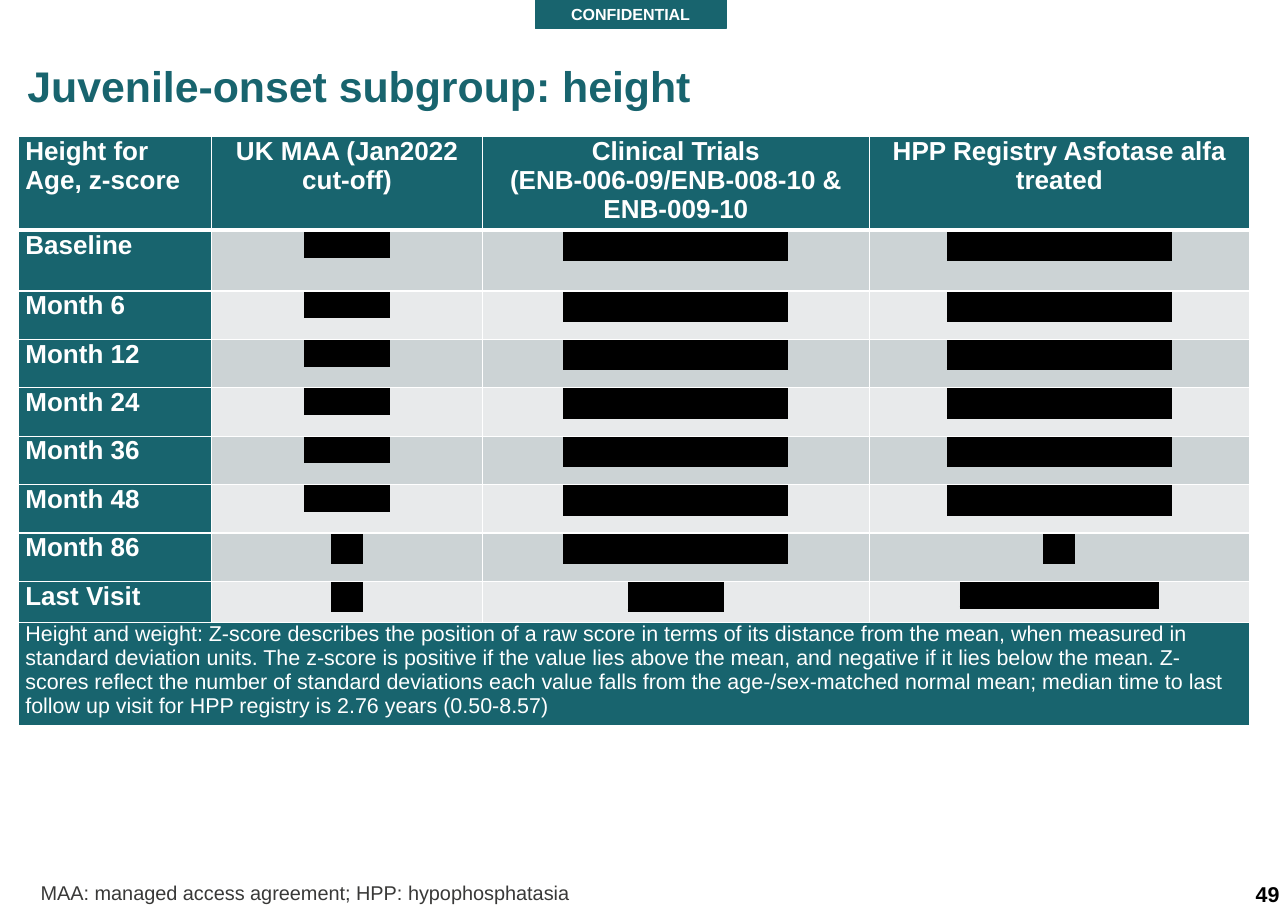
from lxml.etree import SubElement
from pptx import Presentation
from pptx.dml.color import RGBColor
from pptx.enum.shapes import MSO_SHAPE
from pptx.enum.text import MSO_ANCHOR, PP_ALIGN
from pptx.oxml import parse_xml
from pptx.oxml.ns import nsdecls, qn
from pptx.util import Inches, Pt

TEAL = "18646E"
WHITE = "FFFFFF"
BLACK = "000000"
BANDS = ("CCD3D5", "E8EAEB")

COLUMN_WIDTHS = (1.75, 2.46, 3.51, 3.45)
HEADERS = (
    "Height for Age, z-score",
    "UK MAA (Jan2022 cut-off)",
    "Clinical Trials (ENB-006-09/ENB-008-10 & ENB-009-10",
    "HPP Registry Asfotase alfa treated",
)
USUAL_MASKS = ((9, 16), (21, 18), (21, 18))
VISITS = (
    ("Baseline", 0.55, USUAL_MASKS),
    ("Month 6", 0.44, USUAL_MASKS),
    ("Month 12", 0.44, USUAL_MASKS),
    ("Month 24", 0.44, USUAL_MASKS),
    ("Month 36", 0.44, USUAL_MASKS),
    ("Month 48", 0.44, USUAL_MASKS),
    ("Month 86", 0.44, ((3, 18), (21, 18), (3, 18))),
    ("Last Visit", 0.37, ((3, 18), (9, 18), (21, 16))),
)
NOTE = (
    "Height and weight: Z-score describes the position of a raw score in terms of "
    "its distance from the mean, when measured in standard deviation units. The "
    "z-score is positive if the value lies above the mean, and negative if it lies "
    "below the mean. Z-scores reflect the number of standard deviations each value "
    "falls from the age-/sex-matched normal mean; median time to last follow up "
    "visit for HPP registry is 2.76 years (0.50-8.57)"
)


def color(value):
    return RGBColor.from_string(value)


def write(text_frame, text, size, text_color, bold=False, align=PP_ALIGN.LEFT):
    text_frame.text = text
    text_frame.word_wrap = True
    paragraph = text_frame.paragraphs[0]
    paragraph.alignment = align
    font = paragraph.runs[0].font
    font.size = Pt(size)
    font.bold = bold
    font.color.rgb = color(text_color)
    font.name = "Arial"
    return paragraph


def set_margins(text_frame, margin):
    text_frame.margin_left = text_frame.margin_right = Inches(margin)
    text_frame.margin_top = text_frame.margin_bottom = Inches(margin)


def add_box(slide, box, fill):
    shape = slide.shapes.add_shape(MSO_SHAPE.RECTANGLE, *map(Inches, box))
    shape.shadow.inherit = False
    shape.fill.solid()
    shape.fill.fore_color.rgb = color(fill)
    shape.line.fill.background()
    shape.text_frame.vertical_anchor = MSO_ANCHOR.MIDDLE
    return shape


def add_footnote(slide, box):
    shape = add_box(slide, box, WHITE)
    write(shape.text_frame, "MAA: managed access agreement; HPP: hypophosphatasia",
          13, "393938")


def add_title(slide, box):
    text_box = slide.shapes.add_textbox(*map(Inches, box))
    paragraph = write(text_box.text_frame, "Juvenile-onset subgroup: height",
                      28, TEAL, True)
    paragraph.line_spacing = Pt(42)


def add_marking(slide, box):
    shape = add_box(slide, box, TEAL)
    shape.line.color.rgb = color(TEAL)
    shape.line.width = Pt(0.75)
    set_margins(shape.text_frame, 0.04)
    write(shape.text_frame, "CONFIDENTIAL", 10.5, WHITE, True, PP_ALIGN.CENTER)


def add_page_number(slide, box):
    text_frame = slide.shapes.add_textbox(*map(Inches, box)).text_frame
    set_margins(text_frame, 0)
    text_frame.vertical_anchor = MSO_ANCHOR.BOTTOM
    write(text_frame, "49", 14, BLACK, True, PP_ALIGN.CENTER)


def set_borders(cell, widths):
    properties = cell._tc.get_or_add_tcPr()
    for side, width in zip("LRTB", widths):
        line = SubElement(properties, qn(f"a:ln{side}"), w=str(Pt(width)))
        fill = SubElement(line, qn("a:solidFill"))
        SubElement(fill, qn("a:srgbClr"), val=WHITE)


def fill_cell(cell, text, fill, size, text_color=WHITE, bold=False,
              align=PP_ALIGN.LEFT, borders=(1, 1, 1, 1)):
    cell.margin_left = cell.margin_right = Inches(0.06)
    cell.margin_top = cell.margin_bottom = 0
    set_borders(cell, borders)
    cell.fill.solid()
    cell.fill.fore_color.rgb = color(fill)
    paragraph = write(cell.text_frame, text, size, text_color, bold, align)
    paragraph.space_after = Pt(2)
    return paragraph.runs[0]


def mask(run):
    run.font.underline = True
    highlight = parse_xml(
        f'<a:highlight {nsdecls("a")}><a:srgbClr val="{BLACK}"/></a:highlight>')
    run._r.rPr.find(qn("a:latin")).addprevious(highlight)


def add_height_table(slide, box):
    row_heights = [0.85] + [height for _, height, _ in VISITS] + [0.93]
    table = slide.shapes.add_table(
        len(row_heights), len(COLUMN_WIDTHS), *map(Inches, box)).table
    table.first_row = table.horz_banding = False
    for column, width in zip(table.columns, COLUMN_WIDTHS):
        column.width = Inches(width)
    for row, height in zip(table.rows, row_heights):
        row.height = Inches(height)

    for index, header in enumerate(HEADERS):
        align = PP_ALIGN.CENTER if index else PP_ALIGN.LEFT
        fill_cell(table.cell(0, index), header, TEAL, 17, WHITE, True, align,
                  (1, 1, 1, 3))

    for row, (visit, _, masks) in enumerate(VISITS, 1):
        top = 3 if row == 1 else 1
        borders = (1, 1, top, 1)
        fill_cell(table.cell(row, 0), visit, TEAL, 17, WHITE, True, borders=borders)
        for column, (count, size) in enumerate(masks, 1):
            run = fill_cell(table.cell(row, column), "*" * count,
                            BANDS[(row - 1) % 2], size, BLACK,
                            align=PP_ALIGN.CENTER, borders=borders)
            mask(run)

    last = len(row_heights) - 1
    note = table.cell(last, 0)
    note.merge(table.cell(last, len(COLUMN_WIDTHS) - 1))
    fill_cell(note, NOTE, TEAL, 14)


def main():
    presentation = Presentation()
    presentation.slide_width = Inches(11.69)
    presentation.slide_height = Inches(8.27)
    slide = presentation.slides.add_slide(presentation.slide_layouts[6])
    add_footnote(slide, (0.27, 7.94, 11.21, 0.32))
    add_title(slide, (0.15, 0.38, 11.35, 0.6))
    add_marking(slide, (4.86, 0, 1.73, 0.26))
    add_page_number(slide, (11.23, 7.87, 0.55, 0.36))
    add_height_table(slide, (0.17, 1.24, 11.17, 5.34))
    presentation.save("out.pptx")


if __name__ == "__main__":
    main()
